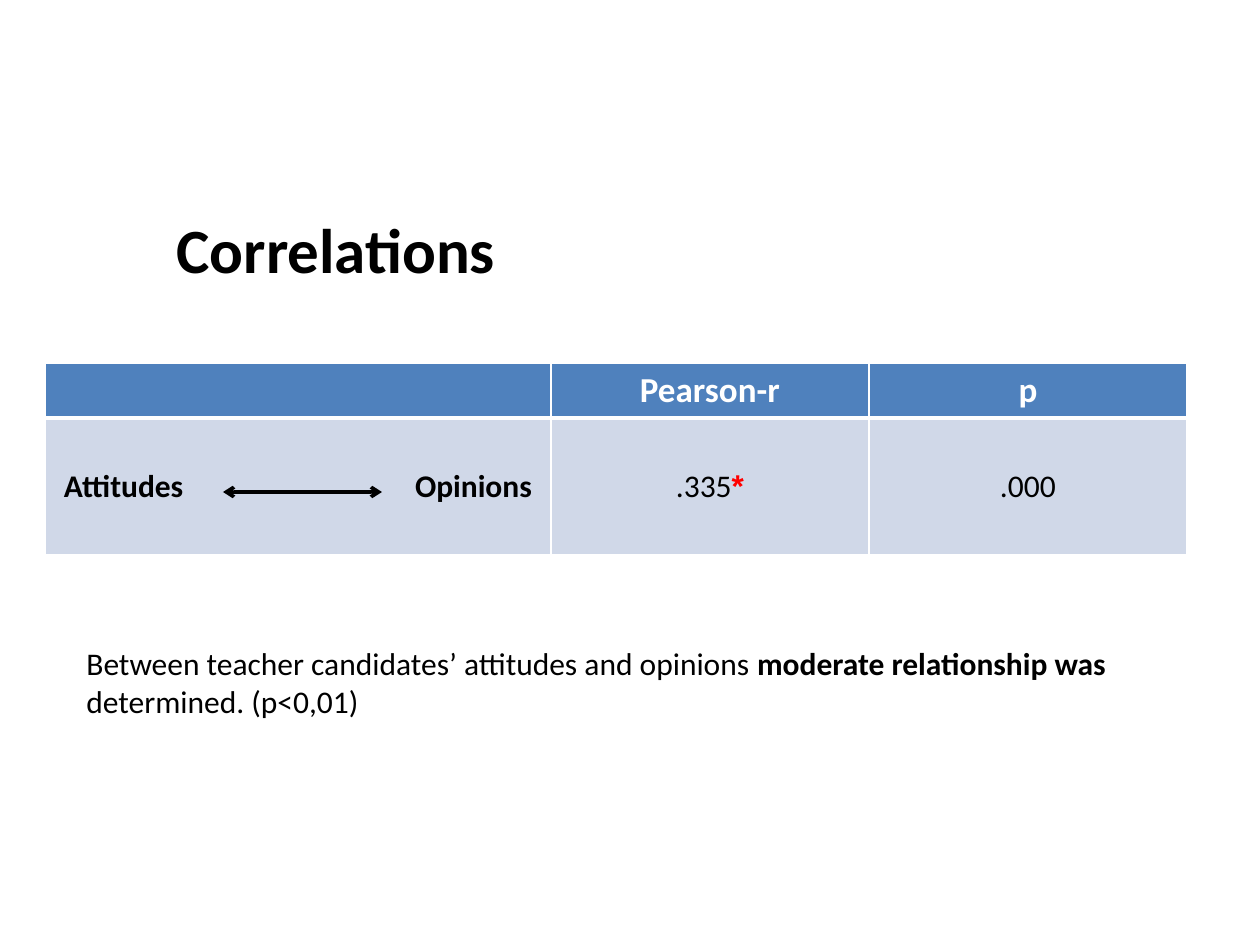
"""Build the correlations slide."""
from dataclasses import dataclass

from lxml.etree import SubElement
from pptx import Presentation
from pptx.dml.color import RGBColor
from pptx.enum.shapes import MSO_CONNECTOR
from pptx.enum.text import MSO_ANCHOR, MSO_AUTO_SIZE, PP_ALIGN
from pptx.oxml.ns import qn
from pptx.util import Emu, Pt


@dataclass(frozen=True)
class Theme:
    """Colours, fonts and type sizes."""
    font: str = "Calibri"
    mark: str = "Arial"
    ink: str = "000000"
    paper: str = "FFFFFF"
    head: str = "4F81BD"
    band: str = "D0D8E8"
    star: str = "FF0000"
    title: int = 36
    label: int = 20
    body: int = 18


THEME = Theme()


def px(count):
    """Turn pixels into EMU."""
    return Emu(round(count * 914400 / 126))


def rgb(code):
    """Read a hex colour."""
    return RGBColor.from_string(code)


def style(font, size, color=THEME.ink, bold=None):
    """Format a font."""
    font.name, font.size, font.bold = THEME.font, Pt(size), bold
    font.color.rgb = rgb(color)


def add_title(slide, text, box):
    """Place and format the title."""
    title = slide.shapes.title
    title.left, title.top, title.width, title.height = map(px, box)
    frame = title.text_frame
    frame.text = text
    frame.word_wrap = False
    frame.auto_size = MSO_AUTO_SIZE.SHAPE_TO_FIT_TEXT
    para = frame.paragraphs[0]
    para.alignment = PP_ALIGN.LEFT
    style(para.font, THEME.title, bold=True)


def add_note(slide, parts, box):
    """Add a text box of plain and bold parts."""
    frame = slide.shapes.add_textbox(*map(px, box)).text_frame
    frame.word_wrap = True
    frame.auto_size = MSO_AUTO_SIZE.SHAPE_TO_FIT_TEXT
    para = frame.paragraphs[0]
    style(para.font, THEME.body)
    for text, bold in parts:
        run = para.add_run()
        run.text = text
        run.font.bold = bold


def set_edge(cell, side, width):
    """Draw one cell border, or hide it at zero width."""
    line = SubElement(cell._tc.get_or_add_tcPr(), qn(f"a:ln{side}"), w=str(Pt(width)))
    if width:
        fill = SubElement(line, qn("a:solidFill"))
        SubElement(fill, qn("a:srgbClr"), val=THEME.paper)
    else:
        SubElement(line, qn("a:noFill"))


def fill_cell(cell, text, align, head, edges):
    """Fill, border and write one cell."""
    for side, width in zip("LRTB", edges):
        set_edge(cell, side, width)
    cell.fill.solid()
    cell.fill.fore_color.rgb = rgb(THEME.head if head else THEME.band)
    cell.vertical_anchor = MSO_ANCHOR.TOP if head else MSO_ANCHOR.MIDDLE
    cell.text = text
    para = cell.text_frame.paragraphs[0]
    para.alignment = align
    size, color = (THEME.label, THEME.paper) if head else (THEME.body, THEME.ink)
    style(para.font, size, color, head)


def add_grid(slide, rows, box, widths, heights):
    """Add the correlation table."""
    grid = slide.shapes.add_table(len(rows), len(widths), *map(px, box)).table
    for col, width in zip(grid.columns, widths):
        col.width = px(width)
    for row, height in zip(grid.rows, heights):
        row.height = px(height)
    aligns = PP_ALIGN.LEFT, PP_ALIGN.RIGHT, PP_ALIGN.CENTER, PP_ALIGN.CENTER
    for r, row in enumerate(rows):
        for c, text in enumerate(row):
            head = r == 0
            align = PP_ALIGN.CENTER if head else aligns[c]
            edges = int(c != 1), int(c != 0), 1 if head else 3, 3 if head else 1
            fill_cell(grid.cell(r, c), text, align, head, edges)
    grid.cell(0, 0).merge(grid.cell(0, 1))
    return grid


def mark_pair(grid):
    """Set the paired names in bold and inset them."""
    left, right = grid.cell(1, 0), grid.cell(1, 1)
    left.margin_left = right.margin_right = px(19)
    for cell in (left, right):
        cell.text_frame.paragraphs[0].font.bold = True


def add_star(cell):
    """Add the mark of significance."""
    run = cell.text_frame.paragraphs[0].add_run()
    run.text = "*"
    run.font.name, run.font.bold = THEME.mark, True
    run.font.color.rgb = rgb(THEME.star)


def add_arrow(slide, start, end):
    """Add a line with two arrowheads."""
    arrow = slide.shapes.add_connector(MSO_CONNECTOR.STRAIGHT, *map(px, start + end))
    arrow.line.width = Pt(2)
    arrow.line.color.rgb = rgb(THEME.ink)
    line = arrow.line._get_or_add_ln()
    for tip in ("headEnd", "tailEnd"):
        SubElement(line, qn(f"a:{tip}"), type="arrow")
    SubElement(arrow._element.spPr, qn("a:effectLst"))


def main():
    """Build and save the slide."""
    deck = Presentation()
    deck.slide_width, deck.slide_height = px(1260), px(945)
    slide = deck.slides.add_slide(deck.slide_layouts[5])
    add_title(slide, "Correlations", (164, 204, 362, 89))
    rows = [["", "", "Pearson-r", "p"],
            ["Attitudes", "Opinions", ".335", ".000"]]
    grid = add_grid(slide, rows, (45, 363, 1142, 192), (238, 268, 318, 318), (55, 137))
    mark_pair(grid)
    add_star(grid.cell(1, 2))
    add_note(slide, [("Between teacher candidates’ attitudes and opinions ", False),
                     ("moderate relationship was", True),
                     (" determined. (p<0,01)", False)], (74, 638, 1101, 89))
    add_arrow(slide, (223, 492), (382, 492))
    deck.save("out.pptx")


if __name__ == "__main__":
    main()
